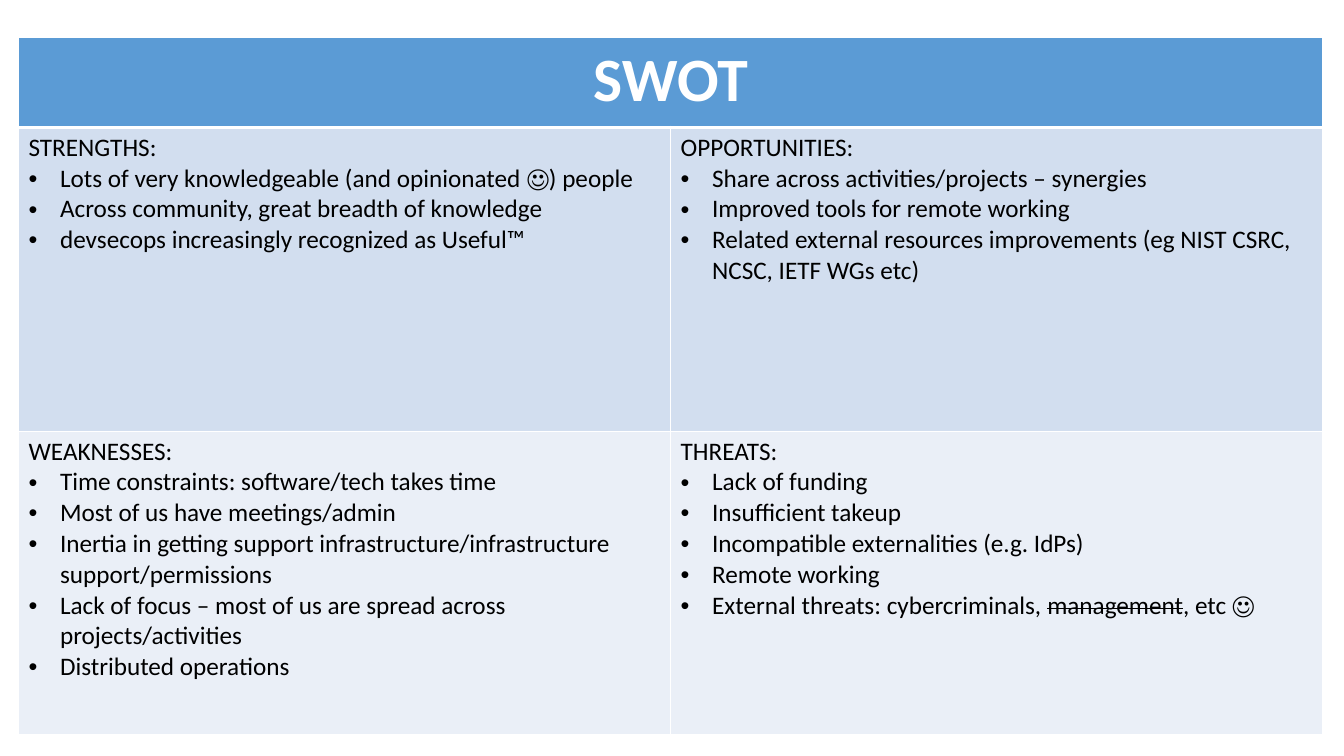
"""Build a one-slide SWOT table."""
from lxml.etree import SubElement
from pptx import Presentation
from pptx.dml.color import RGBColor
from pptx.enum.text import PP_ALIGN
from pptx.oxml.ns import qn
from pptx.util import Pt


def paint(fill, color):
    fill.solid()
    fill.fore_color.rgb = RGBColor.from_string(color)


def add_text(paragraph, text, size=18, color="000000", bold=False, strike=False):
    run = paragraph.add_run()
    run.text = text
    run.font.name = "Calibri"
    run.font.size = Pt(size)
    run.font.bold = bold
    paint(run.font.fill, color)
    if strike:
        run._r.get_or_add_rPr().set("strike", "sngStrike")


quadrants = [
    [
        ("STRENGTHS:", [
            ["Lots of very knowledgeable (and opinionated ☺) people"],
            ["Across community, great breadth of knowledge"],
            ["devsecops increasingly recognized as Useful™"],
        ]),
        ("OPPORTUNITIES:", [
            ["Share across activities/projects – synergies"],
            ["Improved tools for remote working"],
            ["Related external resources improvements (eg NIST CSRC, NCSC, IETF WGs etc)"],
        ]),
    ],
    [
        ("WEAKNESSES:", [
            ["Time constraints: software/tech takes time"],
            ["Most of us have meetings/admin"],
            ["Inertia in getting support infrastructure/infrastructure support/permissions"],
            ["Lack of focus – most of us are spread across projects/activities"],
            ["Distributed operations"],
        ]),
        ("THREATS:", [
            ["Lack of funding"],
            ["Insufficient takeup"],
            ["Incompatible externalities (e.g. IdPs)"],
            ["Remote working"],
            ["External threats: cybercriminals, ", "management", ", etc ☺"],
        ]),
    ],
]
row_heights = [64, 217, 217]
row_fills = ["5B9BD5", "D2DEEF", "EAEFF7"]
struck_words = {"management"}

presentation = Presentation()
presentation.slide_width = Pt(960)
presentation.slide_height = Pt(540)
slide = presentation.slides.add_slide(presentation.slide_layouts[6])
table = slide.shapes.add_table(
    3, 2, Pt(13.2), Pt(27), Pt(931.6), Pt(sum(row_heights))
).table

for row_index, (height, row_fill) in enumerate(zip(row_heights, row_fills)):
    table.rows[row_index].height = Pt(height)
    for cell in table.rows[row_index].cells:
        properties = cell._tc.get_or_add_tcPr()
        for side in "LRTB":
            thick = (row_index, side) in [(0, "B"), (1, "T")]
            border = SubElement(properties, qn(f"a:ln{side}"), w=str(Pt(3 if thick else 1)))
            border_fill = SubElement(border, qn("a:solidFill"))
            SubElement(border_fill, qn("a:srgbClr"), val="FFFFFF")
        paint(cell.fill, row_fill)

heading_cell = table.cell(0, 0)
heading_cell.merge(table.cell(0, 1))
heading = heading_cell.text_frame.paragraphs[0]
heading.alignment = PP_ALIGN.CENTER
add_text(heading, "SWOT", size=44, color="FFFFFF", bold=True)

for row_index, quadrant_row in enumerate(quadrants, start=1):
    for column_index, (label, points) in enumerate(quadrant_row):
        text_frame = table.cell(row_index, column_index).text_frame
        add_text(text_frame.paragraphs[0], label)
        for point in points:
            paragraph = text_frame.add_paragraph()
            properties = paragraph._p.get_or_add_pPr()
            properties.set("marL", str(Pt(22.5)))
            properties.set("indent", str(-Pt(22.5)))
            SubElement(properties, qn("a:buFont"), typeface="Arial")
            SubElement(properties, qn("a:buChar"), char="•")
            for part in point:
                add_text(paragraph, part, strike=part in struck_words)

presentation.save("out.pptx")
